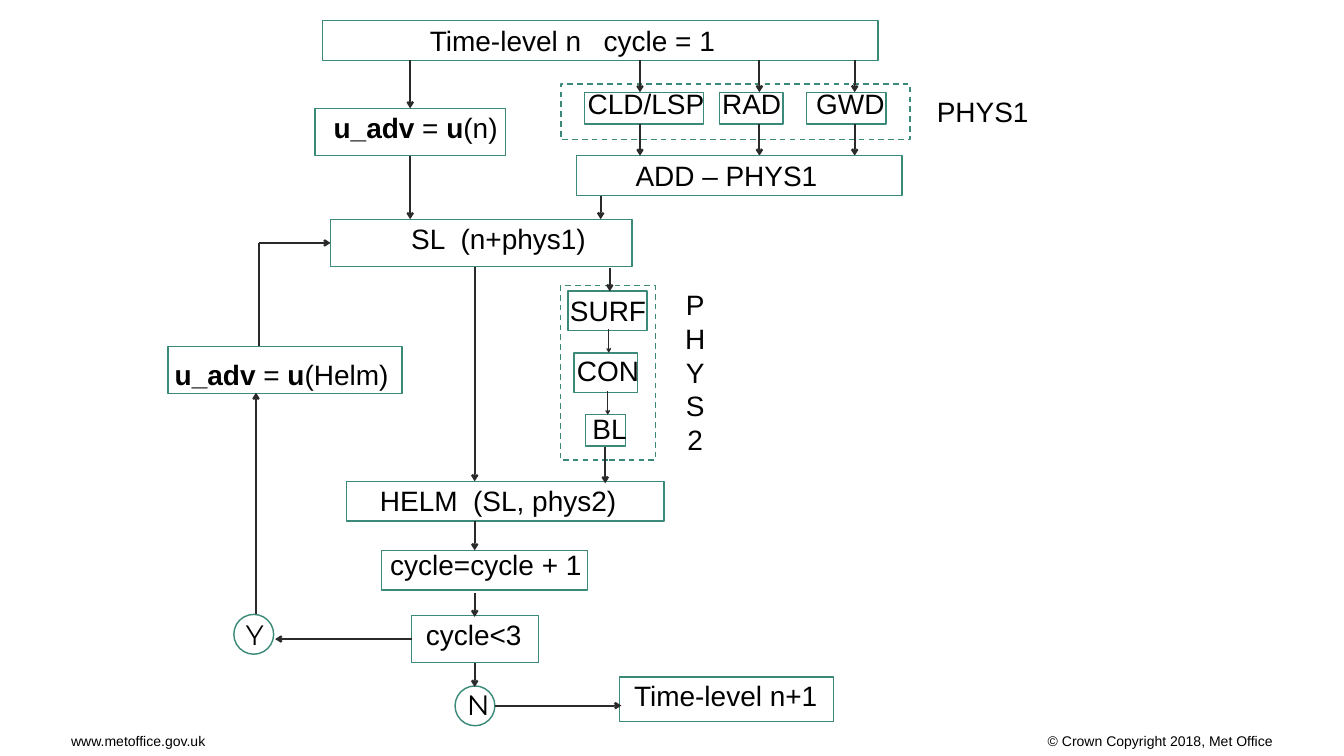
from lxml.etree import SubElement
from pptx import Presentation
from pptx.dml.color import RGBColor
from pptx.enum.dml import MSO_LINE
from pptx.enum.shapes import MSO_CONNECTOR, MSO_SHAPE
from pptx.enum.text import MSO_ANCHOR, PP_ALIGN
from pptx.oxml.ns import qn
from pptx.util import Inches, Pt

GREEN, DARK, BLACK = "3B8979", "2A2A2A", "000000"


def color(code):
    """Turn a hex string into a colour."""
    return RGBColor.from_string(code)


def frame(slide, x, y, w, h, kind=MSO_SHAPE.RECTANGLE, dash=False):
    """Draw an outlined shape without fill."""
    shape = slide.shapes.add_shape(kind, Inches(x), Inches(y), Inches(w), Inches(h))
    shape.shadow.inherit = False
    shape.fill.background()
    shape.line.color.rgb = color(GREEN)
    shape.line.width = Pt(2)
    if dash:
        shape.line.dash_style = MSO_LINE.DASH


def label(slide, x, y, w, runs, h=0.77, font="Arial", size=40, left=0.1, right=0.1, tab=None, align="l"):
    """Write runs of (text, bold, size), centred unless a tab stop is given."""
    box = slide.shapes.add_textbox(Inches(x), Inches(y), Inches(w), Inches(h))
    text = box.text_frame
    text.word_wrap = tab is not None
    text.vertical_anchor = MSO_ANCHOR.MIDDLE
    text.margin_left, text.margin_right = Inches(left), Inches(right)
    text.margin_top = text.margin_bottom = Inches(0.06)
    para = text.paragraphs[0]
    para.alignment = PP_ALIGN.CENTER
    if tab:
        para.alignment = PP_ALIGN.LEFT
        stops = SubElement(para._p.get_or_add_pPr(), qn("a:tabLst"))
        SubElement(stops, qn("a:tab"), pos=str(Inches(tab)), algn=align)
    for words, bold, points in [(runs, False, size)] if isinstance(runs, str) else runs:
        run = para.add_run()
        run.text = words
        run.font.name, run.font.size, run.font.bold = font, Pt(points), bold
        run.font.color.rgb = color(BLACK)
    return box


def arrow(slide, x1, y1, x2, y2, width=3, tip=True):
    """Draw a line, with an arrowhead at its end if tip is set."""
    line = slide.shapes.add_connector(
        MSO_CONNECTOR.STRAIGHT, Inches(x1), Inches(y1), Inches(x2), Inches(y2))
    line.line.color.rgb = color(DARK)
    line.line.width = Pt(width)
    if tip:
        SubElement(line.line._get_or_add_ln(), qn("a:tailEnd"), type="arrow")
    SubElement(line._element.spPr, qn("a:effectLst"))


def wind(end):
    """Give the runs that set u_adv."""
    return [("u_adv", True, 40), (" = ", False, 40), ("u", True, 40), (end, False, 40)]


def start(slide, x, y):
    """Draw the first time level and the first wind."""
    frame(slide, x + 0.15, y, 11.02, 0.79)
    label(slide, x + 2.04, y, 6.14, "Time-level n\tcycle = 1", left=0.24, tab=3.45)
    frame(slide, x, y + 1.74, 3.78, 0.94)
    label(slide, x + 0.25, y + 1.74, 3.65, wind("(n) "))
    arrow(slide, x + 1.89, y + 0.79, x + 1.89, y + 1.74)
    arrow(slide, x + 1.89, y + 2.68, x + 1.89, y + 3.94)


def phys1(slide, x, y):
    """Draw the first physics group and its sum."""
    frame(slide, x, y, 6.93, 1.1, dash=True)
    label(slide, x + 7.35, y + 0.16, 2.04, "PHYS1")
    parts = [("CLD/LSP", 0.47, 2.36, 0.42, 2.54, 1.57),
             ("RAD", 3.15, 1.26, 3.09, 1.39, 3.94),
             ("GWD", 4.88, 1.57, 4.72, 2.05, 5.83)]
    for name, left, wide, near, span, mid in parts:
        frame(slide, x + left, y + 0.16, wide, 0.63)
        label(slide, x + near, y, span, name)
        for top in (-0.47, 0.79):
            arrow(slide, x + mid, y + top, x + mid, y + top + 0.63)
    frame(slide, x + 0.31, y + 1.42, 6.46, 0.79)
    label(slide, x + 1.36, y + 1.42, 3.85, "ADD – PHYS1")
    arrow(slide, x + 0.79, y + 2.21, x + 0.79, y + 2.68)


def solve(slide, x, y):
    """Draw the SL step and the Helm step below it."""
    frame(slide, x, y, 5.98, 0.94)
    label(slide, x + 1.51, y, 3.71, "SL\t(n+phys1)", left=0.09, tab=0.98)
    arrow(slide, x + 2.86, y + 0.95, x + 2.86, y + 5.2)
    frame(slide, x + 0.32, y + 5.2, 6.3, 0.79)
    label(slide, x + 0.89, y + 5.2, 4.94, "HELM\t(SL, phys2)", left=0.09, tab=1.85)


def phys2(slide, x, y):
    """Draw the second physics group."""
    frame(slide, x, y, 1.89, 3.46, dash=True)
    parts = [("SURF", 0.15, 0.1, 1.57, 0.79, 0.08, 0.11, 1.73),
             ("CON", 0.27, 1.33, 1.26, 0.79, 0.22, 1.29, 1.45),
             ("BL", 0.5, 2.55, 0.79, 0.63, 0.53, 2.45, 0.89)]
    for name, left, top, wide, high, near, rise, span in parts:
        frame(slide, x + left, y + top, wide, high)
        label(slide, x + near, y + rise, span, name)
    for mid, top, end, width in [(0.98, -0.36, 0.11, 3), (0.96, 0.86, 1.33, 1.5),
                                 (0.94, 2.09, 2.56, 1.5), (0.89, 3.19, 3.92, 3)]:
        arrow(slide, x + mid, y + top, x + mid, y + end, width)
    side = label(slide, x + 2.21, y - 0.17, 0.93, "PHYS2", h=3.76)
    side.text_frame._txBody.bodyPr.set("vert", "wordArtVert")


def test(slide, x, y):
    """Draw the cycle count, the test and the way out."""
    frame(slide, x, y, 4.09, 0.79)
    label(slide, x + 0.05, y - 0.1, 4.04, "cycle=cycle + 1")
    frame(slide, x + 0.6, y + 1.29, 2.52, 0.94)
    label(slide, x + 0.77, y + 1.29, 2.12, "cycle<3")
    frame(slide, x + 1.46, y + 2.69, 0.79, 0.79, MSO_SHAPE.OVAL)
    label(slide, x + 1.45, y + 2.67, 0.94, "N", font="Montserrat")
    frame(slide, x + 4.72, y + 2.51, 4.25, 0.89)
    label(slide, x + 4.88, y + 2.5, 3.9, "Time-level n+1")
    for top, end in [(-0.59, 0), (0.85, 1.32), (2.23, 2.71)]:
        arrow(slide, x + 1.85, y + top, x + 1.85, y + end)
    arrow(slide, x + 2.25, y + 3.08, x + 4.76, y + 3.08)


def loop(slide, x, y):
    """Draw the way back from the test to the SL step."""
    frame(slide, x, y, 4.65, 0.94)
    label(slide, x + 0.01, y - 0.67, 4.88, wind("(Helm)") + [(" ", False, 100)], h=1.78)
    frame(slide, x + 1.31, y + 5.32, 0.79, 0.79, MSO_SHAPE.OVAL)
    label(slide, x + 1.41, y + 5.34, 0.63, "Y", font="Montserrat")
    arrow(slide, x + 4.84, y + 5.81, x + 2.13, y + 5.81)
    arrow(slide, x + 1.75, y + 5.31, x + 1.75, y + 0.92)
    arrow(slide, x + 1.81, y, x + 1.81, y - 2.05, tip=False)
    arrow(slide, x + 1.81, y - 2.05, x + 3.23, y - 2.05)


def footer(slide, x, y):
    """Write the address and the copyright line."""
    label(slide, x, y, 25.58, "www.metoffice.gov.uk\t© Crown Copyright 2018, Met Office",
          h=0.44, size=20, left=0.87, right=0.8, tab=23.85, align="r")


def main():
    """Build the slide and save it."""
    deck = Presentation()
    deck.slide_width, deck.slide_height = Inches(26.67), Inches(15)
    slide = deck.slides.add_slide(deck.slide_layouts[6])
    start(slide, 6.25, 0.41)
    phys1(slide, 11.13, 1.67)
    solve(slide, 6.56, 4.35)
    phys2(slide, 11.12, 5.67)
    test(slide, 7.57, 10.92)
    loop(slide, 3.33, 6.87)
    footer(slide, 0.54, 14.49)
    deck.save("out.pptx")


if __name__ == "__main__":
    main()
